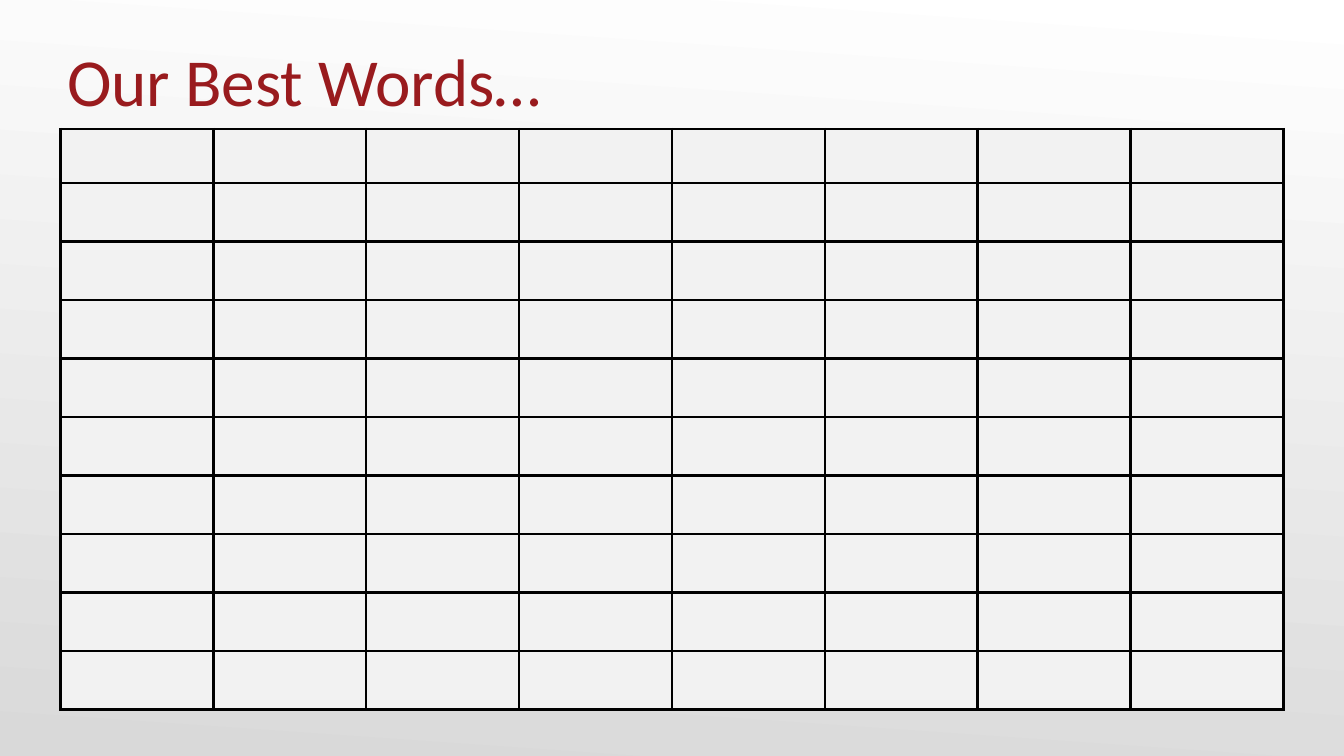
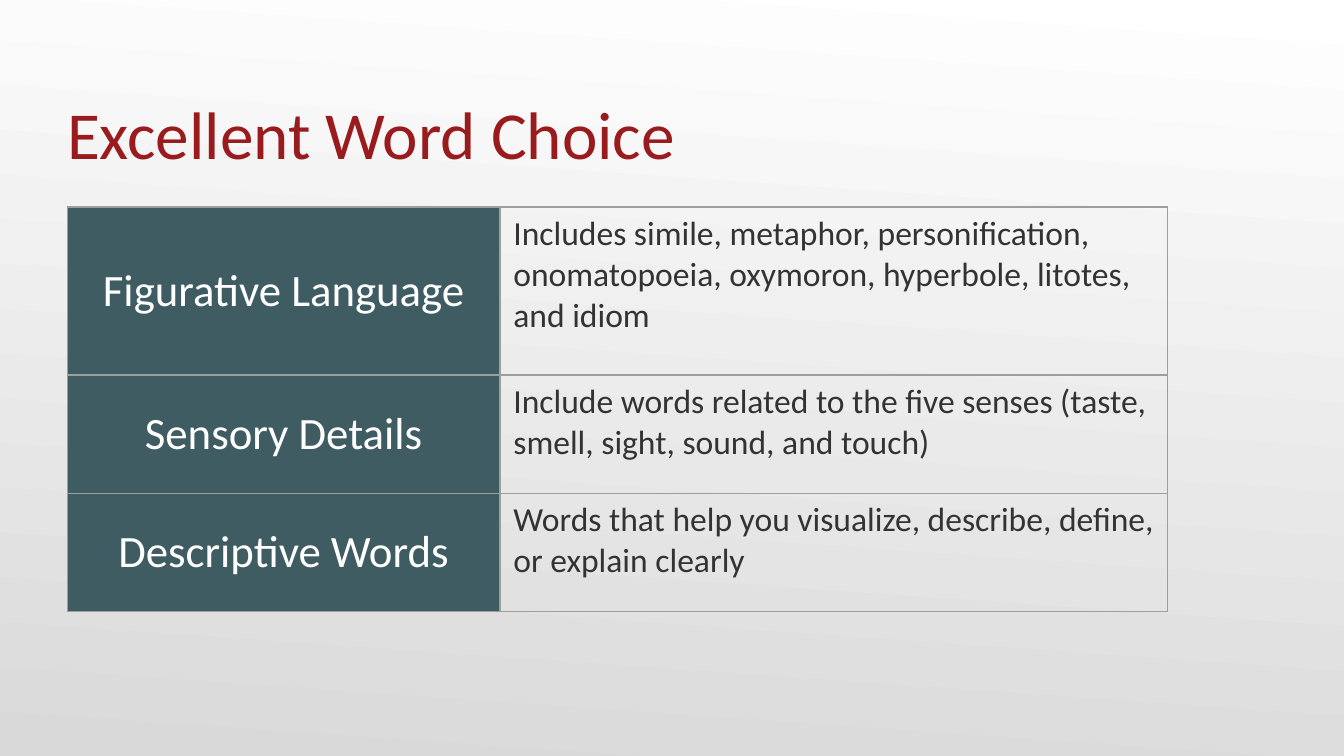
import pptx
import pptx.dml.color
import pptx.enum.text
import pptx.oxml
import pptx.oxml.ns
import pptx.util
from dataclasses import dataclass
from lxml import etree

Inches = pptx.util.Inches
Pt = pptx.util.Pt
RGB = pptx.dml.color.RGBColor.from_string
ANCHOR = pptx.enum.text.MSO_ANCHOR
ALIGN = pptx.enum.text.PP_ALIGN


@dataclass(frozen=True)
class Theme:
    font: str = "Calibri"
    background: tuple = ("FFFFFF", "D9D9D9")
    background_angle: int = 266
    title_color: str = "991B1E"
    title_size: int = 36
    blank_cell: str = "F2F2F2"
    blank_border: str = "000000"
    label_cell: str = "3E5C61"
    label_color: str = "FFFFFF"
    label_size: int = 24
    detail_color: str = "333333"
    detail_size: int = 18
    detail_border: str = "9E9E9E"


theme = Theme()


def add_text(frame, text, size, color):
    """Write text as one styled run in the frame's first paragraph."""
    para = frame.paragraphs[0]
    span = para.add_run()
    span.text = text
    span.font.name = theme.font
    span.font.size = Pt(size)
    span.font.color.rgb = RGB(color)
    return para


def add_grid(page, left, top, widths, heights, border_color, border_points):
    """Add a plain table with the same border on every cell side."""
    table = page.shapes.add_table(
        len(heights), len(widths), Inches(left), Inches(top),
        Inches(sum(widths)), Inches(sum(heights))).table
    table.first_row = False
    table.horz_banding = False
    for column, width in zip(table.columns, widths):
        column.width = Inches(width)
    for row, height in zip(table.rows, heights):
        row.height = Inches(height)
    qn = pptx.oxml.ns.qn
    for cell in table.iter_cells():
        cell.fill.background()
        properties = cell._tc.get_or_add_tcPr()
        for position, side in enumerate(("a:lnL", "a:lnR", "a:lnT", "a:lnB")):
            line = etree.Element(qn(side), w=str(Pt(border_points)))
            fill = etree.SubElement(line, qn("a:solidFill"))
            etree.SubElement(fill, qn("a:srgbClr"), val=border_color)
            properties.insert(position, line)
    return table


# Widescreen, 16 to 9
deck = pptx.Presentation()
deck.slide_width = Inches(10)
deck.slide_height = Inches(10 * 9 / 16)

# Slides and their titles: text, top, height
titles = [
    ("Our Best Words…", 0.74, 0.15),
    ("Excellent Word Choice", 0.35, 0.94),
]
pages = []
for title, top, height in titles:
    page = deck.slides.add_slide(deck.slide_layouts[6])
    backdrop = page.background.fill
    backdrop.gradient()
    backdrop.gradient_angle = theme.background_angle
    for stop, position, color in zip(backdrop.gradient_stops, (0, 1), theme.background):
        stop.position = position
        stop.color.rgb = RGB(color)

    box = page.shapes.add_textbox(Inches(0.5), Inches(top), Inches(9), Inches(height))
    frame = box.text_frame
    frame.word_wrap = True
    frame.vertical_anchor = ANCHOR.BOTTOM
    frame.margin_left = frame.margin_right = frame.margin_bottom = 0
    frame.margin_top = Inches(0.05)
    add_text(frame, title, theme.title_size, theme.title_color)
    pages.append(page)

words_page, choice_page = pages

# Blank word grid
word_columns = 8
word_rows = 9
header_height = 0.38
row_height = (4.3 - header_height) / word_rows
word_grid = add_grid(
    words_page, 0.45, 0.96, [9.1 / word_columns] * word_columns,
    [header_height] + [row_height] * word_rows, theme.blank_border, 1.5)
for cell in word_grid.iter_cells():
    cell.fill.solid()
    cell.fill.fore_color.rgb = RGB(theme.blank_cell)

# Kinds of word choice
choices = [
    ("Figurative Language",
     "Includes simile, metaphor, personification, onomatopoeia, oxymoron, "
     "hyperbole, litotes, and idiom"),
    ("Sensory Details",
     "Include words related to the five senses (taste, smell, sight, sound, and touch)"),
    ("Descriptive Words",
     "Words that help you visualize, describe, define, or explain clearly"),
]
choice_table = add_grid(
    choice_page, 0.5, 1.54, [3.22, 4.97], [1.25, 0.88, 0.88], theme.detail_border, 0.75)
for row, (label, detail) in zip(choice_table.rows, choices):
    label_cell, detail_cell = row.cells
    label_cell.fill.solid()
    label_cell.fill.fore_color.rgb = RGB(theme.label_cell)
    label_cell.vertical_anchor = ANCHOR.MIDDLE
    para = add_text(label_cell.text_frame, label, theme.label_size, theme.label_color)
    para.alignment = ALIGN.CENTER
    add_text(detail_cell.text_frame, detail, theme.detail_size, theme.detail_color)

deck.save("out.pptx")
